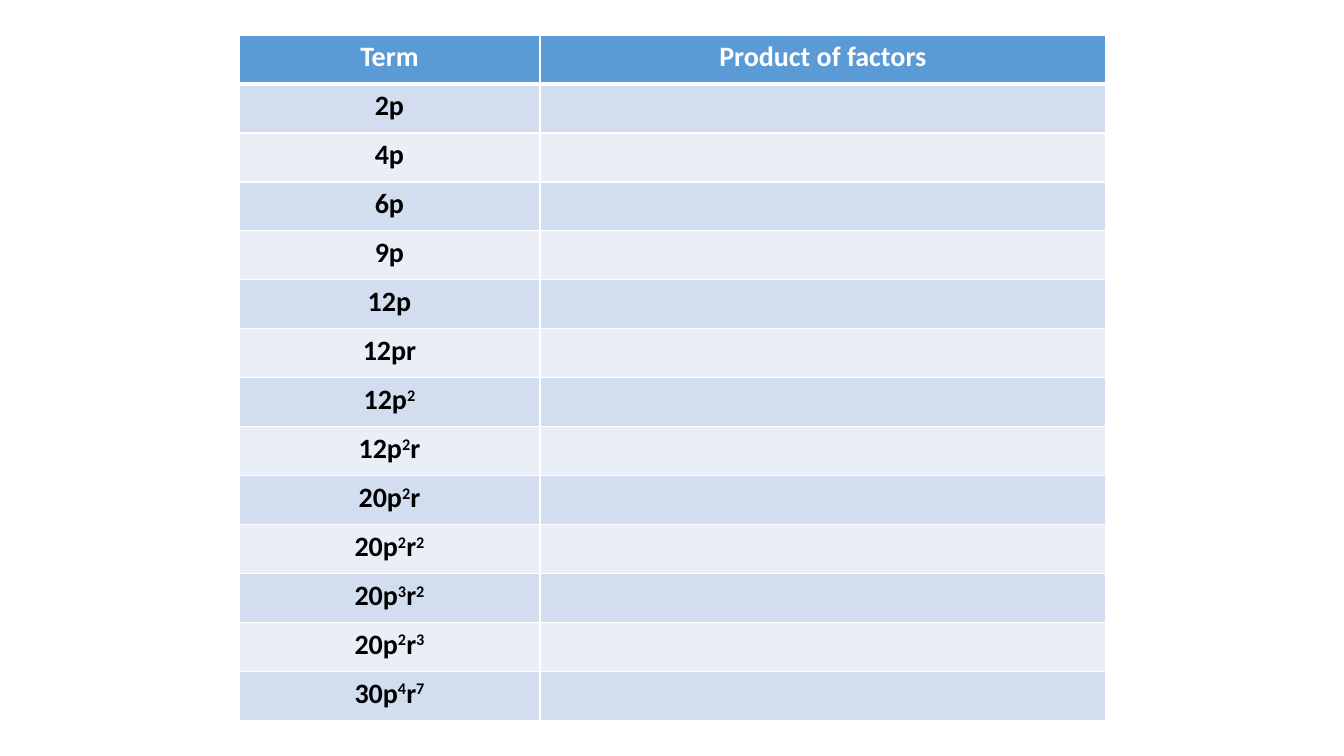
"""Build a slide with a table of algebraic terms to be written as products of factors."""
from lxml import etree
from pptx import Presentation
from pptx.dml.color import RGBColor
from pptx.enum.text import PP_ALIGN
from pptx.oxml.ns import qn
from pptx.util import Pt

CENTER = PP_ALIGN.CENTER
HEADINGS = ["Term", "Product of factors"]
# Each term alternates between base text and superscript exponent.
TERMS = [
    ("2p",), ("4p",), ("6p",), ("9p",), ("12p",), ("12pr",),
    ("12p", "2"),
    ("12p", "2", "r"),
    ("20p", "2", "r"),
    ("20p", "2", "r", "2"),
    ("20p", "3", "r", "2"),
    ("20p", "2", "r", "3"),
    ("30p", "4", "r", "7"),
]
COLORS = {
    "header": "5B9BD5", "odd": "D2DEEF", "even": "EAEFF7",
    "border": "FFFFFF", "heading": "FFFFFF", "term": "000000",
}
FONT, FONT_SIZE = "Calibri", 20
SUPERSCRIPT = "30000"
EMU_PER_INCH, PX_PER_INCH = 914400, 100.8
SLIDE_SIZE = (1344, 756)
LEFT, TOP = 239, 35
COLUMN_WIDTHS = (301, 566)
ROW_HEIGHT = 49


def px(length):
    return round(length * EMU_PER_INCH / PX_PER_INCH)


def set_borders(cell, top, bottom):
    properties = cell._tc.get_or_add_tcPr()
    for side, points in (("L", 1), ("R", 1), ("T", top), ("B", bottom)):
        border = etree.SubElement(properties, qn(f"a:ln{side}"), w=str(Pt(points)))
        fill = etree.SubElement(border, qn("a:solidFill"))
        etree.SubElement(fill, qn("a:srgbClr"), val=COLORS["border"])


def write_cell(cell, parts, color):
    paragraph = cell.text_frame.paragraphs[0]
    paragraph.alignment = CENTER
    paragraph.font.size = Pt(FONT_SIZE)
    for position, part in enumerate(parts):
        run = paragraph.add_run()
        run.text = part
        run.font.name = FONT
        run.font.size = Pt(FONT_SIZE)
        run.font.bold = True
        run.font.color.rgb = RGBColor.from_string(color)
        if position % 2:
            run.font._element.set("baseline", SUPERSCRIPT)


def main():
    presentation = Presentation()
    presentation.slide_width, presentation.slide_height = map(px, SLIDE_SIZE)
    slide = presentation.slides.add_slide(presentation.slide_layouts[6])

    rows = [[(heading,) for heading in HEADINGS]] + [[term, ()] for term in TERMS]
    factors = slide.shapes.add_table(
        len(rows), len(HEADINGS), px(LEFT), px(TOP),
        px(sum(COLUMN_WIDTHS)), px(ROW_HEIGHT * len(rows))).table
    for column, width in zip(factors.columns, COLUMN_WIDTHS):
        column.width = px(width)

    for index, row in enumerate(rows):
        factors.rows[index].height = px(ROW_HEIGHT)
        band = "header" if index == 0 else "odd" if index % 2 else "even"
        text_color = COLORS["heading" if index == 0 else "term"]
        for column, parts in enumerate(row):
            cell = factors.cell(index, column)
            set_borders(cell, 3 if index == 1 else 1, 3 if index == 0 else 1)
            cell.fill.solid()
            cell.fill.fore_color.rgb = RGBColor.from_string(COLORS[band])
            write_cell(cell, parts, text_color)

    presentation.save("out.pptx")


if __name__ == "__main__":
    main()
